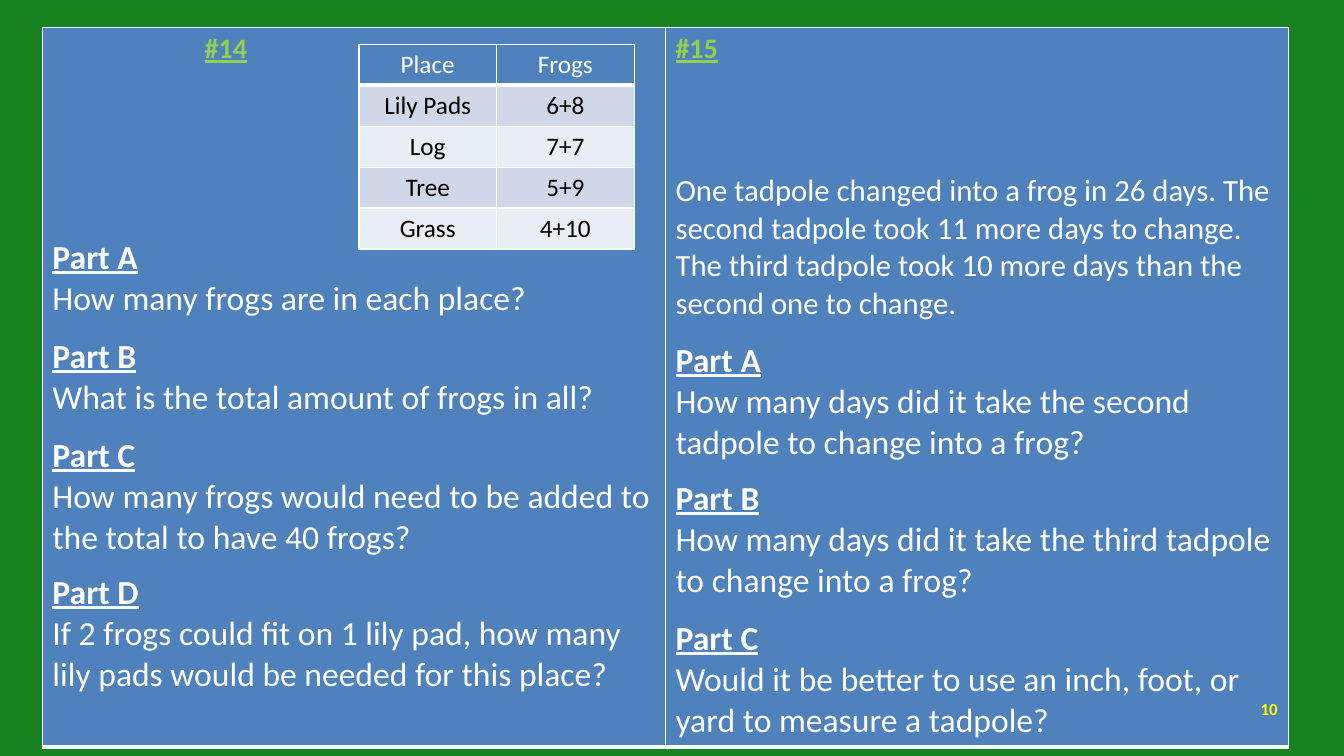
from lxml.etree import SubElement
from pptx import Presentation
from pptx.dml.color import RGBColor
from pptx.enum.text import MSO_ANCHOR, PP_ALIGN
from pptx.oxml.ns import qn
from pptx.util import Inches, Pt

COLORS = {
    "background": "168220", "panel": "4F81BD", "white": "FFFFFF", "black": "000000",
    "number": "92D050", "page": "FFFF00", "odd": "D0D8E8", "even": "E9EDF4",
}
FONT = "Calibri"
LINE_HEIGHT = 1.22
SLIDE_W, SLIDE_H = 13.33, 7.5

STYLES = {
    "number": (20, "number", True),
    "part": (24, "white", True),
    "question": (24, "white", False),
    "story": (22, "white", False),
}
PROBLEMS = [
    [
        ("number", "#14", 0),
        ("part", "Part A", 100),
        ("question", "How many frogs are in each place?", 0),
        ("part", "Part B", 10),
        ("question", "What is the total amount of frogs in all?", 0),
        ("part", "Part C", 10),
        ("question", "How many frogs would need to be added to the total to have 40 frogs?", 0),
        ("part", "Part D", 8),
        ("question", "If 2 frogs could fit on 1 lily pad, how many lily pads would be needed for this place?", 0),
    ],
    [
        ("number", "#15", 0),
        ("story", "One tadpole changed into a frog in 26 days. The second tadpole took 11 more days "
                  "to change. The third tadpole took 10 more days than the second one to change.", 62),
        ("part", "Part A", 10.5),
        ("question", "How many days did it take the second tadpole to change into a frog?", 0),
        ("part", "Part B", 9),
        ("question", "How many days did it take the third tadpole to change into a frog?", 0),
        ("part", "Part C", 10),
        ("question", "Would it be better to use an inch, foot, or yard to measure a tadpole?", 0),
    ],
]
NUMBER_INDENTS = [1.51, 0]
FROG_COUNTS = [
    ("Place", "Frogs"),
    ("Lily Pads", "6+8"),
    ("Log", "7+7"),
    ("Tree", "5+9"),
    ("Grass", "4+10"),
]
PAGE = "10"


def rgb(name):
    return RGBColor.from_string(COLORS[name])


def set_font(paragraph, size, color, bold, underline=False):
    font = paragraph.font
    font.name, font.size, font.bold, font.underline = FONT, Pt(size), bold, underline
    font.color.rgb = rgb(color)


def style_cell(cell, fill, bottom=1):
    properties = cell._tc.get_or_add_tcPr()
    for side, width in zip("LRTB", (1, 1, 1, bottom)):
        border = SubElement(properties, qn(f"a:ln{side}"), w=str(Pt(width)))
        solid = SubElement(border, qn("a:solidFill"))
        SubElement(solid, qn("a:srgbClr"), val=COLORS["white"])
    cell.fill.solid()
    cell.fill.fore_color.rgb = rgb(fill)


def add_grid(slide, rows, columns, left, top, column_width, row_height):
    grid = slide.shapes.add_table(
        rows, columns, Inches(left), Inches(top),
        Inches(columns * column_width), Inches(rows * row_height)).table
    grid.first_row = grid.horz_banding = False
    return grid


def write_problem(cell, lines, indent):
    frame = cell.text_frame
    for index, (style, text, gap) in enumerate(lines):
        paragraph = frame.add_paragraph() if index else frame.paragraphs[0]
        paragraph.text = text
        size, color, bold = STYLES[style]
        if gap:
            paragraph.space_before = Pt(round(gap * LINE_HEIGHT, 1))
        if style == "number" and indent:
            paragraph._p.get_or_add_pPr().set("marL", str(Inches(indent)))
        set_font(paragraph, size, color, bold, underline=bold)


def main():
    deck = Presentation()
    deck.slide_width, deck.slide_height = Inches(SLIDE_W), Inches(SLIDE_H)
    slide = deck.slides.add_slide(deck.slide_layouts[6])
    slide.background.fill.solid()
    slide.background.fill.fore_color.rgb = rgb("background")

    problems = add_grid(slide, 1, len(PROBLEMS), 0.42, 0.27, 6.18, 7.1)
    for column, (lines, indent) in enumerate(zip(PROBLEMS, NUMBER_INDENTS)):
        cell = problems.cell(0, column)
        style_cell(cell, "panel", bottom=3)
        write_problem(cell, lines, indent)

    page_box = slide.shapes.add_textbox(Inches(11.33), Inches(6.83), Inches(1.44), Inches(0.4))
    page_box.text_frame.word_wrap = True
    page_box.text_frame.vertical_anchor = MSO_ANCHOR.MIDDLE
    page_line = page_box.text_frame.paragraphs[0]
    page_line.text = PAGE
    page_line.alignment = PP_ALIGN.RIGHT
    set_font(page_line, 12, "page", True)

    frogs = add_grid(slide, len(FROG_COUNTS), 2, 3.56, 0.44, 1.365, 0.406)
    for row, values in enumerate(FROG_COUNTS):
        header = row == 0
        fill = "panel" if header else "odd" if row % 2 else "even"
        for column, value in enumerate(values):
            cell = frogs.cell(row, column)
            style_cell(cell, fill, bottom=3 if header else 1)
            paragraph = cell.text_frame.paragraphs[0]
            paragraph.text = value
            paragraph.alignment = PP_ALIGN.CENTER
            set_font(paragraph, 18, "white" if header else "black", False)

    deck.save("out.pptx")


if __name__ == "__main__":
    main()
